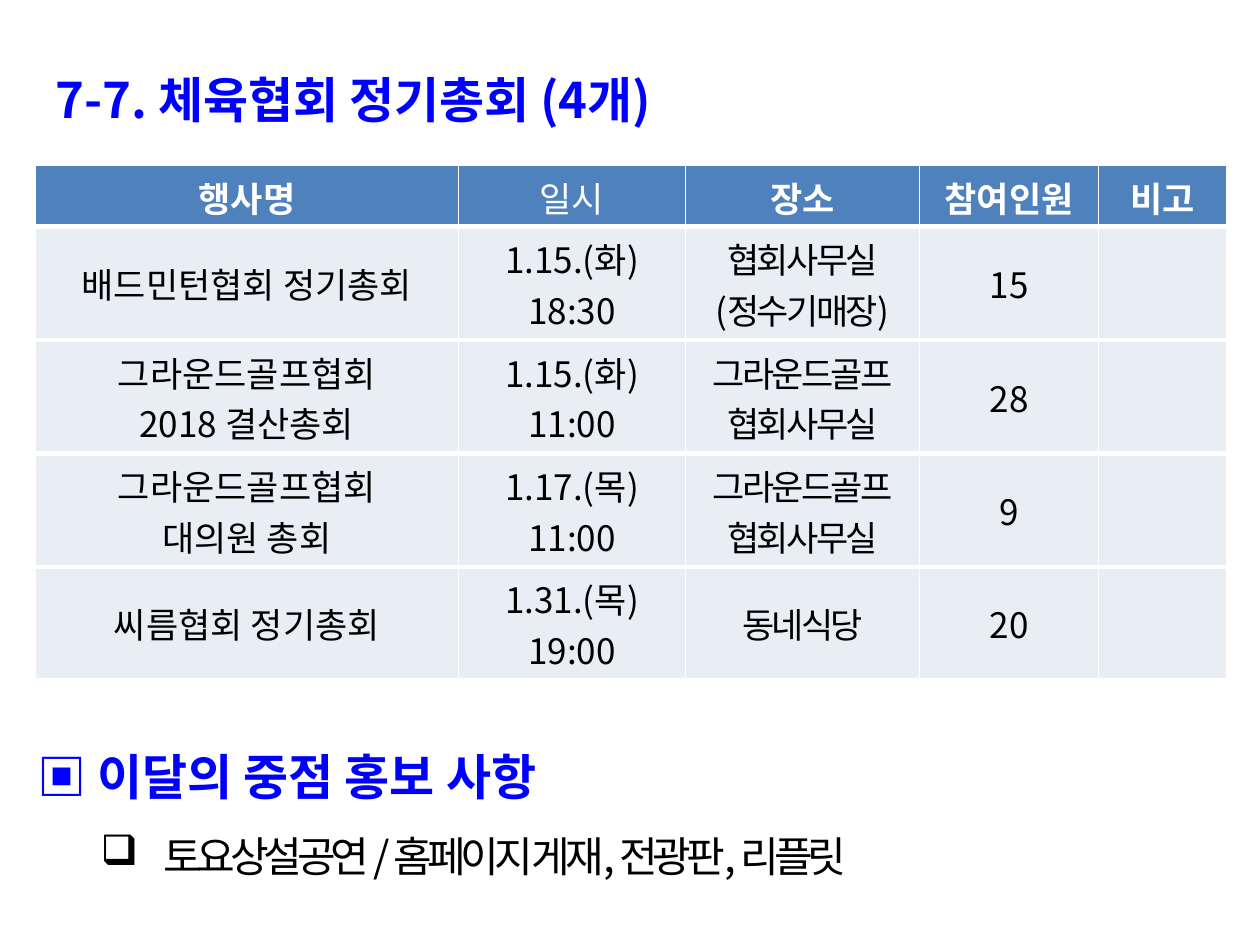
from lxml import etree
from pptx import Presentation
from pptx.dml.color import RGBColor
from pptx.enum.text import MSO_ANCHOR, PP_ALIGN
from pptx.oxml.ns import qn
from pptx.util import Inches, Pt

MIDDLE = MSO_ANCHOR.MIDDLE
CENTER = PP_ALIGN.CENTER
FONT = "Noto Sans CJK KR"
BLUE = RGBColor(0x00, 0x00, 0xFF)
BLACK = RGBColor(0x00, 0x00, 0x00)
WHITE = RGBColor(0xFF, 0xFF, 0xFF)
HEAD = RGBColor(0x4F, 0x81, 0xBD)
BODY = RGBColor(0xE9, 0xED, 0xF4)

# Content
TITLE = "7-7. 체육협회 정기총회 (4개)"
PROMO = "▣ 이달의 중점 홍보 사항"
ITEM = "토요상설공연 / 홈페이지 게재, 전광판, 리플릿"
ROWS = [
    ("행사명", "일시", "장소", "참여인원", "비고"),
    ("배드민턴협회 정기총회", "1.15.(화) 18:30", "협회사무실\n(정수기매장)", "15", ""),
    ("그라운드골프협회\n2018 결산총회", "1.15.(화) 11:00", "그라운드골프\n협회사무실", "28", ""),
    ("그라운드골프협회\n대의원 총회", "1.17.(목) 11:00", "그라운드골프\n협회사무실", "9", ""),
    ("씨름협회 정기총회", "1.31.(목) 19:00", "동네식당", "20", ""),
]
WIDTHS = (3.36, 1.8, 1.86, 1.42, 1.02)
HEAD_H, BODY_H = 0.49, 0.9
DATE, PLACE = 1, 2


def style(para, size, color, bold, space=0):
    """Format every run of a paragraph; space is letter spacing in points."""
    for run in para.runs:
        font = run.font
        font.name, font.size, font.bold = FONT, Pt(size), bold
        font.color.rgb = color
        props = font._element
        etree.SubElement(props, qn("a:ea"), typeface=FONT)
        if space:
            props.set("spc", str(int(space * 100)))


def indent(para, left, first):
    props = para._p.get_or_add_pPr()
    props.set("marL", str(Inches(left)))
    props.set("indent", str(Inches(first)))
    return props


def add_box(left, top, width, height):
    box = slide.shapes.add_textbox(*map(Inches, (left, top, width, height)))
    box.text_frame.word_wrap = True
    return box.text_frame


def border(cell, sides):
    """Draw white cell edges, given as (tag, width in points)."""
    props = cell._tc.get_or_add_tcPr()
    for spot, (tag, width) in enumerate(sides):
        line = etree.Element(qn("a:" + tag), w=str(Pt(width)))
        fill = etree.SubElement(line, qn("a:solidFill"))
        etree.SubElement(fill, qn("a:srgbClr"), val=str(WHITE))
        props.insert(spot, line)


prs = Presentation()
prs.slide_width, prs.slide_height = Inches(10), Inches(7.5)
slide = prs.slides.add_slide(prs.slide_layouts[6])

# Promotion notes
frame = add_box(0.2, 5.64, 8.98, 1.65)
lead = frame.paragraphs[0]
lead.text = PROMO
lead.line_spacing = 1.5
style(lead, 28, BLUE, True)

item = frame.add_paragraph()
item.text = ITEM
item.level = 1
item.line_spacing = 1.5
style(item, 24, BLACK, False, -3)
props = indent(item, 1, -0.5)
tint = etree.SubElement(props, qn("a:buClr"))
etree.SubElement(tint, qn("a:srgbClr"), val=str(BLACK))
etree.SubElement(props, qn("a:buChar"), char="❑")

# Title
title = add_box(0.28, 0.13, 6.18, 1.02).paragraphs[0]
title.text = TITLE
title.line_spacing = 1.8
title.space_before = Pt(5.6)
indent(title, 0.56, -0.5)
style(title, 28, BLUE, True)

# Meeting table
high = HEAD_H + BODY_H * (len(ROWS) - 1)
table = slide.shapes.add_table(
    len(ROWS), len(WIDTHS), Inches(0.28), Inches(1.31),
    Inches(sum(WIDTHS)), Inches(high)).table
table.horz_banding = False
for col, width in zip(table.columns, WIDTHS):
    col.width = Inches(width)

for r, row in enumerate(ROWS):
    top = r == 0
    table.rows[r].height = Inches(HEAD_H if top else BODY_H)
    for c, text in enumerate(row):
        cell = table.cell(r, c)
        cell.text_frame.text = text
        cell.vertical_anchor = MIDDLE
        cell.fill.solid()
        cell.fill.fore_color.rgb = HEAD if top else BODY
        border(cell, [("lnL", 1), ("lnR", 1), ("lnT", 1 if top else 3), ("lnB", 3)])
        for para in cell.text_frame.paragraphs:
            para.alignment = CENTER
            style(para, 20, WHITE if top else BLACK, top and c != DATE,
                  -1.5 if c == PLACE and not top else 0)

prs.save("out.pptx")
